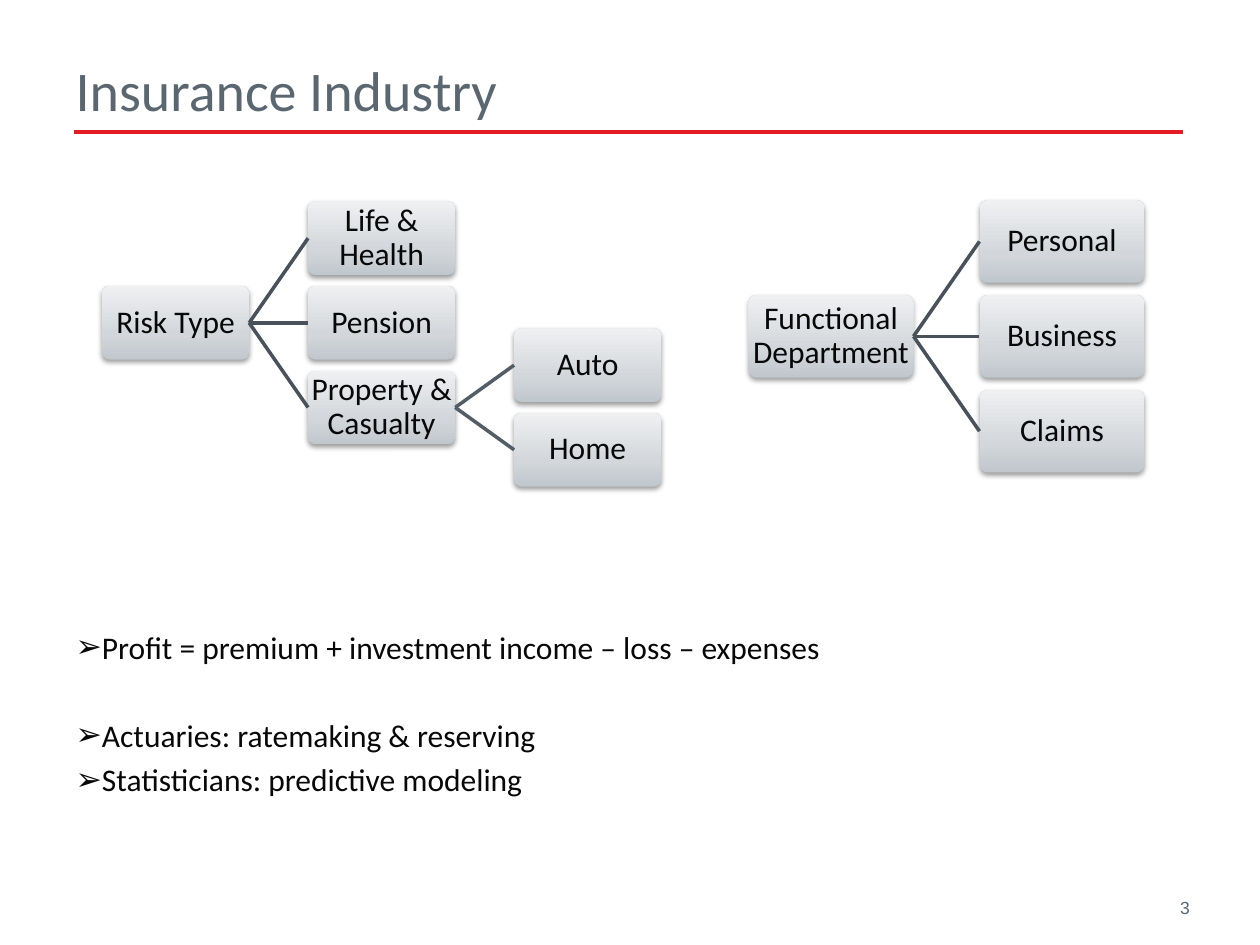
from copy import deepcopy

from lxml import etree
from pptx import Presentation
from pptx.dml.color import RGBColor
from pptx.enum.shapes import MSO_CONNECTOR, MSO_SHAPE
from pptx.enum.text import MSO_ANCHOR, MSO_AUTO_SIZE, PP_ALIGN
from pptx.oxml.ns import qn
from pptx.util import Pt

ROUNDED = MSO_SHAPE.ROUNDED_RECTANGLE
STRAIGHT = MSO_CONNECTOR.STRAIGHT
TOP, MIDDLE, BOTTOM = MSO_ANCHOR.TOP, MSO_ANCHOR.MIDDLE, MSO_ANCHOR.BOTTOM
NO_FIT = MSO_AUTO_SIZE.NONE
LEFT, CENTER, RIGHT = PP_ALIGN.LEFT, PP_ALIGN.CENTER, PP_ALIGN.RIGHT

SLATE = RGBColor(0x5B, 0x67, 0x70)
INK = RGBColor(0x08, 0x08, 0x08)
RED = RGBColor(0xE3, 0x1B, 0x23)
BLACK = RGBColor(0, 0, 0)
BRANCH_COLORS = [RGBColor(0x49, 0x52, 0x5A), RGBColor(0x53, 0x5D, 0x66)]
BOX_GRADIENT = [
    (0, RGBColor(0xC0, 0xC7, 0xCD)),
    (0.35, RGBColor(0xD3, 0xD7, 0xDB)),
    (1, RGBColor(0xEE, 0xF0, 0xF2)),
]

RISK_TREE = ("Risk Type", [
    ("Life & Health", []),
    ("Pension", []),
    ("Property & Casualty", [("Auto", []), ("Home", [])]),
])
DEPARTMENT_TREE = ("Functional Department", [
    ("Personal", []), ("Business", []), ("Claims", []),
])
POINTS = [
    ("Profit = premium + investment income – loss – expenses", 0),
    ("Actuaries: ratemaking & reserving", 29),
    ("Statisticians: predictive modeling", 3.6),
]
BULLET_INDENT = 13.5


def write(para, text, size=18, font="Calibri", color=INK, align=LEFT,
          before=0, spacing=1.0):
    para.alignment = align
    para.space_before = Pt(before)
    para.line_spacing = spacing
    span = para.add_run()
    span.text = text
    span.font.size = Pt(size)
    span.font.name = font
    span.font.color.rgb = color


def place(shape, left, top, width, height):
    shape.left, shape.top = Pt(left), Pt(top)
    shape.width, shape.height = Pt(width), Pt(height)


def set_frame(shape, anchor):
    frame = shape.text_frame
    frame.word_wrap = True
    frame.auto_size = NO_FIT
    frame.vertical_anchor = anchor
    return frame


def add_line(page, color, start=(0, 0), end=(0, 0)):
    line = page.shapes.add_connector(STRAIGHT, *map(Pt, start + end))
    line.line.color.rgb = color
    line.line.width = Pt(2)
    etree.SubElement(line._element.spPr, qn("a:effectLst"))
    return line


def fill_gradient(shape):
    shape.fill.gradient()
    shape.fill.gradient_angle = 90
    stop_list = shape._element.spPr.find(".//" + qn("a:gsLst"))
    stop_list.append(deepcopy(stop_list[-1]))
    for stop, (position, color) in zip(shape.fill.gradient_stops, BOX_GRADIENT):
        stop.position = position
        stop.color.rgb = color


def add_shadow(shape):
    shape.shadow.inherit = False
    effects = shape._element.spPr.find(qn("a:effectLst"))
    shadow = etree.SubElement(
        effects, qn("a:outerShdw"), blurRad=str(Pt(3.1)), dist=str(Pt(1.6)),
        dir="5400000", algn="ctr", rotWithShape="0")
    color = etree.SubElement(shadow, qn("a:srgbClr"), val=str(BLACK))
    etree.SubElement(color, qn("a:alpha"), val="38000")


def add_box(page, text, left, middle, width):
    height = width / 2
    box = page.shapes.add_shape(
        ROUNDED, Pt(left), Pt(middle - height / 2), Pt(width), Pt(height))
    box.adjustments[0] = 0.1
    fill_gradient(box)
    box.line.fill.background()
    add_shadow(box)
    frame = set_frame(box, MIDDLE)
    frame.margin_left = frame.margin_right = Pt(0.7)
    frame.margin_top = frame.margin_bottom = Pt(0.7)
    write(frame.paragraphs[0], text, align=CENTER, spacing=0.9)
    return box


def add_tree(page, tree, left, middle, width, depth=0):
    text, children = tree
    parent = add_box(page, text, left, middle, width)
    pitch = 1.15 * width / 2
    first = middle - pitch * (len(children) - 1) / 2
    for row, child in enumerate(children):
        box = add_tree(page, child, left + 1.4 * width, first + row * pitch,
                       width, depth + 1)
        line = add_line(page, BRANCH_COLORS[depth])
        line.begin_connect(parent, 3)
        line.end_connect(box, 1)
    return parent


def add_title(page, text):
    title = page.shapes.title
    place(title, 36, 16, 648, 58)
    write(set_frame(title, BOTTOM).paragraphs[0], text, size=32, color=SLATE)
    add_line(page, RED, (42.5, 75.6), (676, 75.6))


def add_points(page):
    body = page.placeholders[1]
    place(body, 36, 355, 648, 142)
    frame = set_frame(body, TOP)
    for index, (text, before) in enumerate(POINTS):
        para = frame.add_paragraph() if index else frame.paragraphs[0]
        properties = para._p.get_or_add_pPr()
        properties.set("marL", str(Pt(BULLET_INDENT)))
        properties.set("indent", str(-Pt(BULLET_INDENT)))
        etree.SubElement(properties, qn("a:buFont"), typeface="Arial")
        etree.SubElement(properties, qn("a:buChar"), char="➢")
        write(para, text, before=before)


def add_page_number(page, text):
    box = page.shapes.add_textbox(Pt(519), Pt(509), Pt(168), Pt(20))
    write(set_frame(box, TOP).paragraphs[0], text, size=10, font="Arial",
          color=SLATE, align=RIGHT)


def main():
    deck = Presentation()
    deck.slide_width, deck.slide_height = Pt(720), Pt(540)
    page = deck.slides.add_slide(deck.slide_layouts[1])
    add_title(page, "Insurance Industry")
    add_tree(page, RISK_TREE, left=58.3, middle=184.5, width=84.1)
    add_tree(page, DEPARTMENT_TREE, left=427.7, middle=192.2, width=94.3)
    add_points(page)
    add_page_number(page, "3")
    deck.save("out.pptx")


if __name__ == "__main__":
    main()
